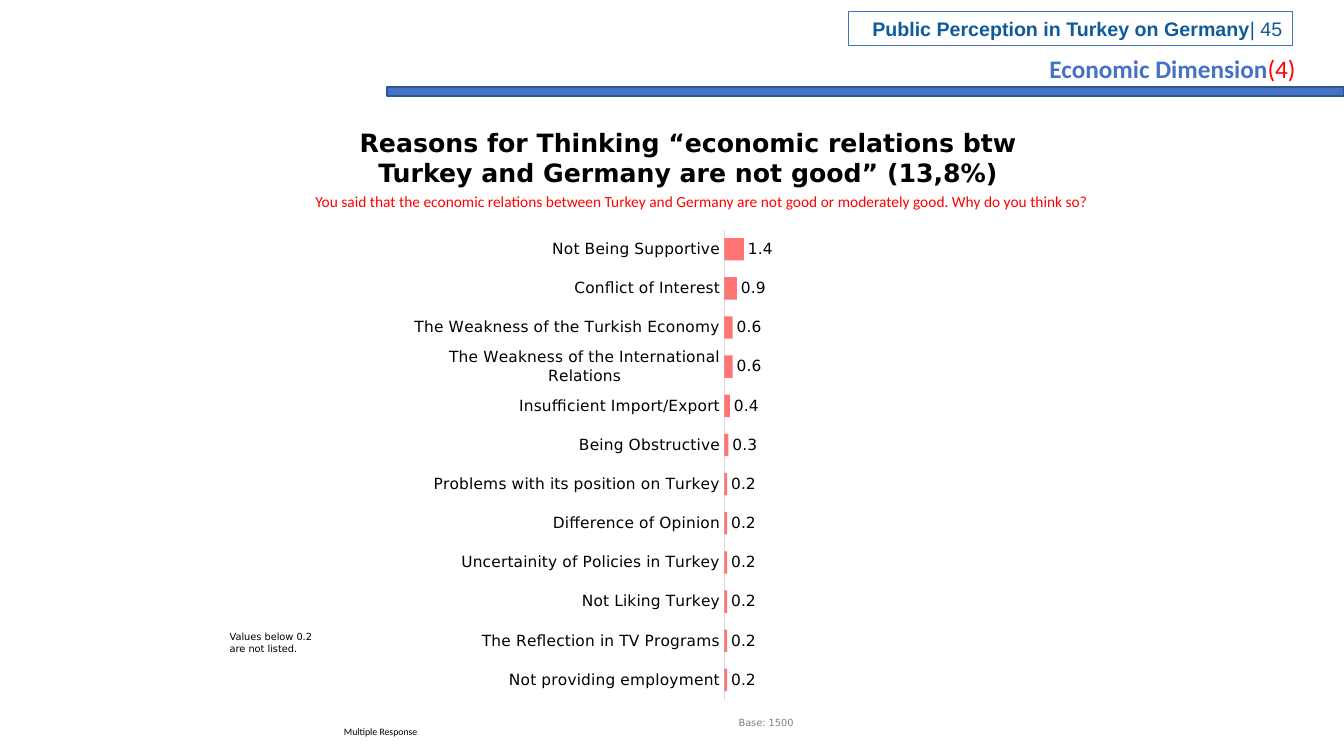
"""Build the survey slide on reasons for seeing economic relations as not good."""
from pptx import Presentation, util as u
from pptx.chart.data import CategoryChartData
from pptx.dml.color import RGBColor
from pptx.enum import chart as ch, shapes, text
from pptx.oxml import parse_xml
from pptx.oxml.ns import nsdecls, qn

COLORS = {"blue": "4472C4", "edge": "325491", "header": "0E5B9A", "red": "FF0000",
          "bar": "FF5050", "black": "000000", "grey": "808080", "axis": "D9D9D9"}
SLIDE_SIZE = (13.33, 7.5)
BAR_OPACITY = 80
VALUE_MAX = 20
LEFT, CENTER, RIGHT = text.PP_ALIGN.LEFT, text.PP_ALIGN.CENTER, text.PP_ALIGN.RIGHT

RULE_AREA = (28.8, 11.5, 71.2, 1.2)
HEADER_AREA = (63.15, 1.5, 33, 4.5)
CHART_AREA = (28.95, 30, 45.85, 64.15)
PLOT_SHARES = {"x": 0.544, "y": 0.006, "w": 0.456, "h": 0.969}

HEADER = [("Public Perception in Turkey on Germany", "header", True), ("| 45", "header", False)]
CAPTIONS = [
    ((15.1, 24.8, 74.25, 3.85), CENTER, "Calibri", 11,
     [("You said that the economic relations between Turkey and Germany are not good "
       "or moderately good. Why do you think so?", "red", False)]),
    ((25.8, 16.15, 50.8, 9.45), CENTER, "DejaVu Sans", 18,
     [("Reasons for Thinking “economic relations btw Turkey and Germany are not good” (13,8%)",
       "black", True)]),
    ((24.3, 95.35, 8.05, 2.95), CENTER, "Calibri", 7, [("Multiple Response", "black", False)]),
    ((16.35, 82.8, 8.55, 4.55), LEFT, "DejaVu Sans", 7,
     [("Values below 0.2 are not listed.", "black", False)]),
    ((77.35, 6.4, 21.1, 5.35), LEFT, "Calibri", 18,
     [("Economic Dimension", "blue", True), ("(4)", "red", False)]),
    ((53.95, 94.15, 6.1, 2.95), CENTER, "DejaVu Sans", 7, [("Base: 1500", "grey", False)]),
]
REASONS = [
    ("Not Being Supportive", 1.4),
    ("Conflict of Interest", 0.9),
    ("The Weakness of the Turkish Economy", 0.6),
    ("The Weakness of the International Relations", 0.6),
    ("Insufficient Import/Export", 0.4),
    ("Being Obstructive", 0.3),
    ("Problems with its position on Turkey", 0.2),
    ("Difference of Opinion", 0.2),
    ("Uncertainity of Policies in Turkey", 0.2),
    ("Not Liking Turkey", 0.2),
    ("The Reflection in TV Programs", 0.2),
    ("Not providing employment", 0.2),
]


def color(name):
    return RGBColor.from_string(COLORS[name])


def place(area):
    return [u.Inches(share / 100 * SLIDE_SIZE[i % 2]) for i, share in enumerate(area)]


def style(font, face, size, shade, bold=False):
    font.name, font.size, font.bold = face, u.Pt(size), bold
    font.color.rgb = color(shade)


def write(frame, align, face, size, parts):
    frame.word_wrap = True
    frame.auto_size = text.MSO_AUTO_SIZE.SHAPE_TO_FIT_TEXT
    paragraph = frame.paragraphs[0]
    paragraph.alignment = align
    for words, shade, bold in parts:
        run = paragraph.add_run()
        run.text = words
        style(run.font, face, size, shade, bold)


def add_box(slide, area, line, width, fill=None):
    box = slide.shapes.add_shape(shapes.MSO_SHAPE.RECTANGLE, *place(area))
    box.shadow.inherit = False
    if fill:
        box.fill.solid()
        box.fill.fore_color.rgb = color(fill)
    else:
        box.fill.background()
    box.line.color.rgb = color(line)
    box.line.width = u.Pt(width)
    return box


def add_reasons(slide):
    data = CategoryChartData(number_format="0.0")
    data.categories = [reason for reason, _ in REASONS]
    data.add_series("Series 1", [value for _, value in REASONS])
    chart = slide.shapes.add_chart(ch.XL_CHART_TYPE.BAR_CLUSTERED, *place(CHART_AREA), data).chart
    chart.has_legend = chart.has_title = False
    style(chart.font, "DejaVu Sans", 11, "grey")

    reasons_axis = chart.category_axis
    reasons_axis.reverse_order = True
    reasons_axis.major_tick_mark = reasons_axis.minor_tick_mark = ch.XL_TICK_MARK.NONE
    reasons_axis.format.line.color.rgb = color("axis")
    reasons_axis.format.line.width = u.Pt(0.75)
    style(reasons_axis.tick_labels.font, "DejaVu Sans", 11, "black")

    values_axis = chart.value_axis
    values_axis.minimum_scale, values_axis.maximum_scale = 0, VALUE_MAX
    values_axis.has_major_gridlines = False
    values_axis.visible = False

    plot = chart.plots[0]
    plot.gap_width = 75
    plot.vary_by_categories = False
    plot.has_data_labels = True
    labels = plot.data_labels
    labels.show_value = True
    labels.number_format, labels.number_format_is_linked = "0.0", False
    labels.position = ch.XL_LABEL_POSITION.OUTSIDE_END
    style(labels.font, "DejaVu Sans", 11, "black")

    bars = plot.series[0]
    bars.invert_if_negative = False
    bars.format.fill.solid()
    bars.format.fill.fore_color.rgb = color("bar")
    shade = next(bars.format.fill._xPr.iter(qn("a:srgbClr")))
    shade.append(parse_xml(f'<a:alpha {nsdecls("a")} val="{BAR_OPACITY * 1000}"/>'))

    plot_area = next(chart._chartSpace.iter(qn("c:plotArea")))
    for layout in plot_area.findall(qn("c:layout")):
        plot_area.remove(layout)
    modes = "".join(f'<c:{side}Mode val="edge"/>' for side in "xy")
    shares = "".join(f'<c:{side} val="{share}"/>' for side, share in PLOT_SHARES.items())
    plot_area.insert(0, parse_xml(
        f'<c:layout {nsdecls("c")}><c:manualLayout><c:layoutTarget val="inner"/>'
        f'{modes}{shares}</c:manualLayout></c:layout>'))


def main():
    deck = Presentation()
    deck.slide_width, deck.slide_height = (u.Inches(side) for side in SLIDE_SIZE)
    slide = deck.slides.add_slide(deck.slide_layouts[6])
    add_box(slide, RULE_AREA, "edge", 1, "blue")
    header = add_box(slide, HEADER_AREA, "blue", 0.75)
    write(header.text_frame, RIGHT, "Arial", 14, HEADER)
    add_reasons(slide)
    for area, *caption in CAPTIONS:
        write(slide.shapes.add_textbox(*place(area)).text_frame, *caption)
    deck.save("out.pptx")


if __name__ == "__main__":
    main()
